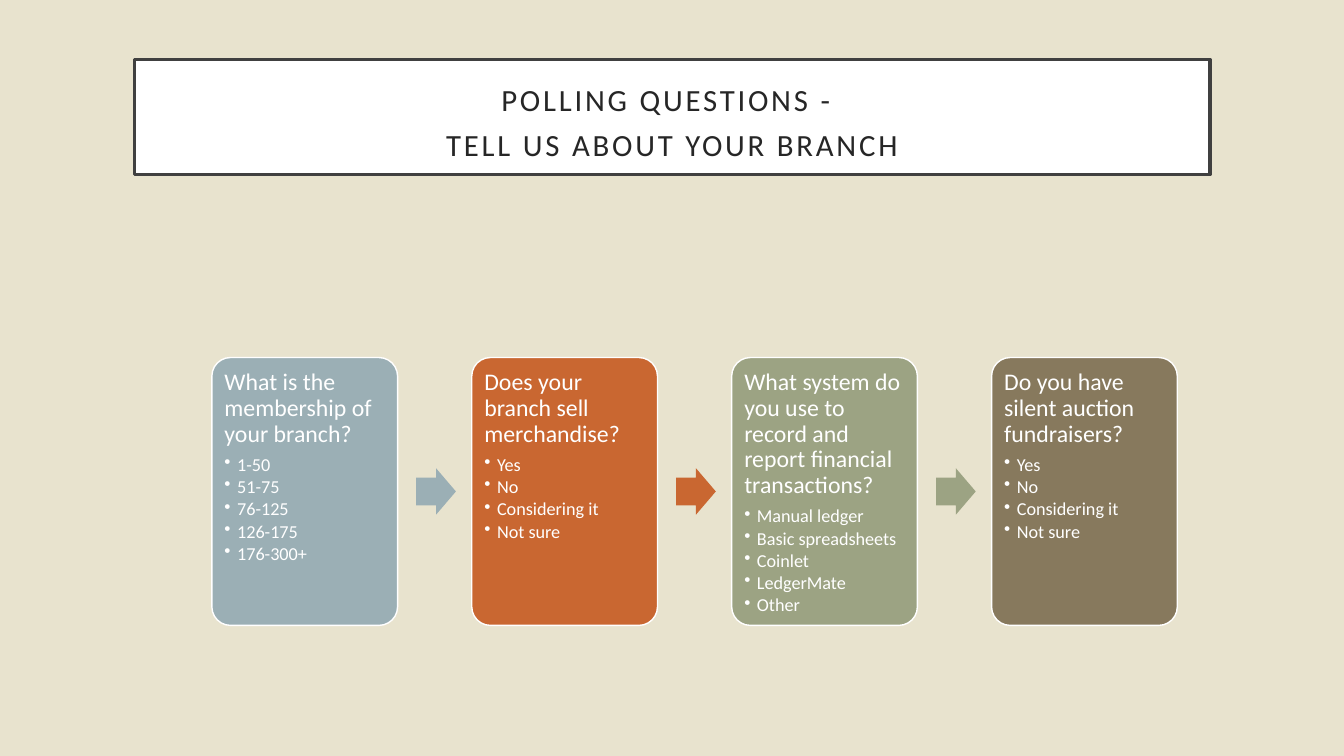
from pptx import Presentation
from pptx import util as u
from pptx.dml.color import RGBColor
from pptx.enum import shapes, text
from pptx.oxml.ns import qn
from lxml import etree

COLORS = {
    "background": "E8E3CE", "white": "FFFFFF", "border": "404040", "title": "262626",
    "blue": "9BAFB5", "orange": "C96731", "green": "9CA383", "brown": "87795D",
}
QUESTIONS = [
    ("blue", "What is the membership of your branch?",
     ["1-50", "51-75", "76-125", "126-175", "176-300+"]),
    ("orange", "Does your branch sell merchandise?",
     ["Yes", "No", "Considering it", "Not sure"]),
    ("green", "What system do you use to record and report financial transactions?",
     ["Manual ledger", "Basic spreadsheets", "Coinlet", "LedgerMate", "Other"]),
    ("brown", "Do you have silent auction fundraisers?",
     ["Yes", "No", "Considering it", "Not sure"]),
]
LEFT, TOP, PITCH = 5.34, 9.01, 6.55
CARD_W, CARD_H = 4.68, 6.75
ARROW_W, ARROW_H, ARROW_OFFSET = 1, 1.17, 5.15
INSET = u.Cm(0.18)
CARD_FRAME = {
    "word_wrap": True, "vertical_anchor": text.MSO_ANCHOR.TOP,
    "margin_left": INSET, "margin_right": INSET, "margin_top": INSET, "margin_bottom": INSET,
}
TITLE_FRAME = {
    "word_wrap": True, "vertical_anchor": text.MSO_ANCHOR.MIDDLE,
    "auto_size": text.MSO_AUTO_SIZE.NONE,
    "margin_left": u.Cm(0.3), "margin_right": u.Cm(0.3),
    "margin_top": u.Cm(0.3), "margin_bottom": u.Cm(0.25),
}


def rgb(name):
    return RGBColor.from_string(COLORS[name])


def format_paragraph(p, size, color, **formats):
    """Set the font of a paragraph and its given paragraph properties."""
    p.font.name = "Calibri"
    p.font.size = u.Pt(size)
    p.font.color.rgb = rgb(color)
    for name, value in formats.items():
        setattr(p, name, value)


prs = Presentation()
prs.slide_width, prs.slide_height = u.Cm(33.87), u.Cm(19.05)
s = prs.slides.add_slide(prs.slide_layouts[5])
s.background.fill.solid()
s.background.fill.fore_color.rgb = rgb("background")

title = s.shapes.title
title.left, title.top, title.width, title.height = u.Cm(3.39), u.Cm(1.5), u.Cm(27.1), u.Cm(2.9)
title.fill.solid()
title.fill.fore_color.rgb = rgb("white")
title.line.color.rgb = rgb("border")
title.line.width = u.Pt(2.5)
tf = title.text_frame
for name, value in TITLE_FRAME.items():
    setattr(tf, name, value)
tf.text = "POLLING QUESTIONS - \vTELL US ABOUT YOUR BRANCH"
p = tf.paragraphs[0]
format_paragraph(p, 22, "title", alignment=text.PP_ALIGN.CENTER, line_spacing=1.2)
for r in p.runs:
    r.font.size = u.Pt(22)
    r.font._element.set("spc", "200")

for i, (color, question, answers) in enumerate(QUESTIONS):
    x = LEFT + i * PITCH
    card = s.shapes.add_shape(shapes.MSO_SHAPE.ROUNDED_RECTANGLE,
                              u.Cm(x), u.Cm(TOP), u.Cm(CARD_W), u.Cm(CARD_H))
    card.adjustments[0] = 0.1
    card.shadow.inherit = False
    card.fill.solid()
    card.fill.fore_color.rgb = rgb(color)
    card.line.color.rgb = rgb("white")
    card.line.width = u.Pt(1)
    tf = card.text_frame
    for name, value in CARD_FRAME.items():
        setattr(tf, name, value)
    p = tf.paragraphs[0]
    p.text = question
    format_paragraph(p, 17, "white", alignment=text.PP_ALIGN.LEFT,
                     line_spacing=0.9, space_after=u.Pt(6))
    for answer in answers:
        p = tf.add_paragraph()
        p.text = answer
        format_paragraph(p, 13, "white", alignment=text.PP_ALIGN.LEFT, level=1,
                         line_spacing=0.9, space_after=u.Pt(1.8))
        pPr = p._p.get_or_add_pPr()
        pPr.set("marL", str(u.Cm(0.32)))
        pPr.set("indent", str(-u.Cm(0.32)))
        bullet = etree.Element(qn("a:buChar"), char="•")
        pPr.find(qn("a:defRPr")).addprevious(bullet)

    if i < len(QUESTIONS) - 1:
        arrow = s.shapes.add_shape(shapes.MSO_SHAPE.RIGHT_ARROW,
                                   u.Cm(x + ARROW_OFFSET), u.Cm(TOP + (CARD_H - ARROW_H) / 2),
                                   u.Cm(ARROW_W), u.Cm(ARROW_H))
        arrow.adjustments[0] = 0.6
        arrow.adjustments[1] = 0.5
        arrow.shadow.inherit = False
        arrow.fill.solid()
        arrow.fill.fore_color.rgb = rgb(color)
        arrow.line.fill.background()

prs.save("out.pptx")
